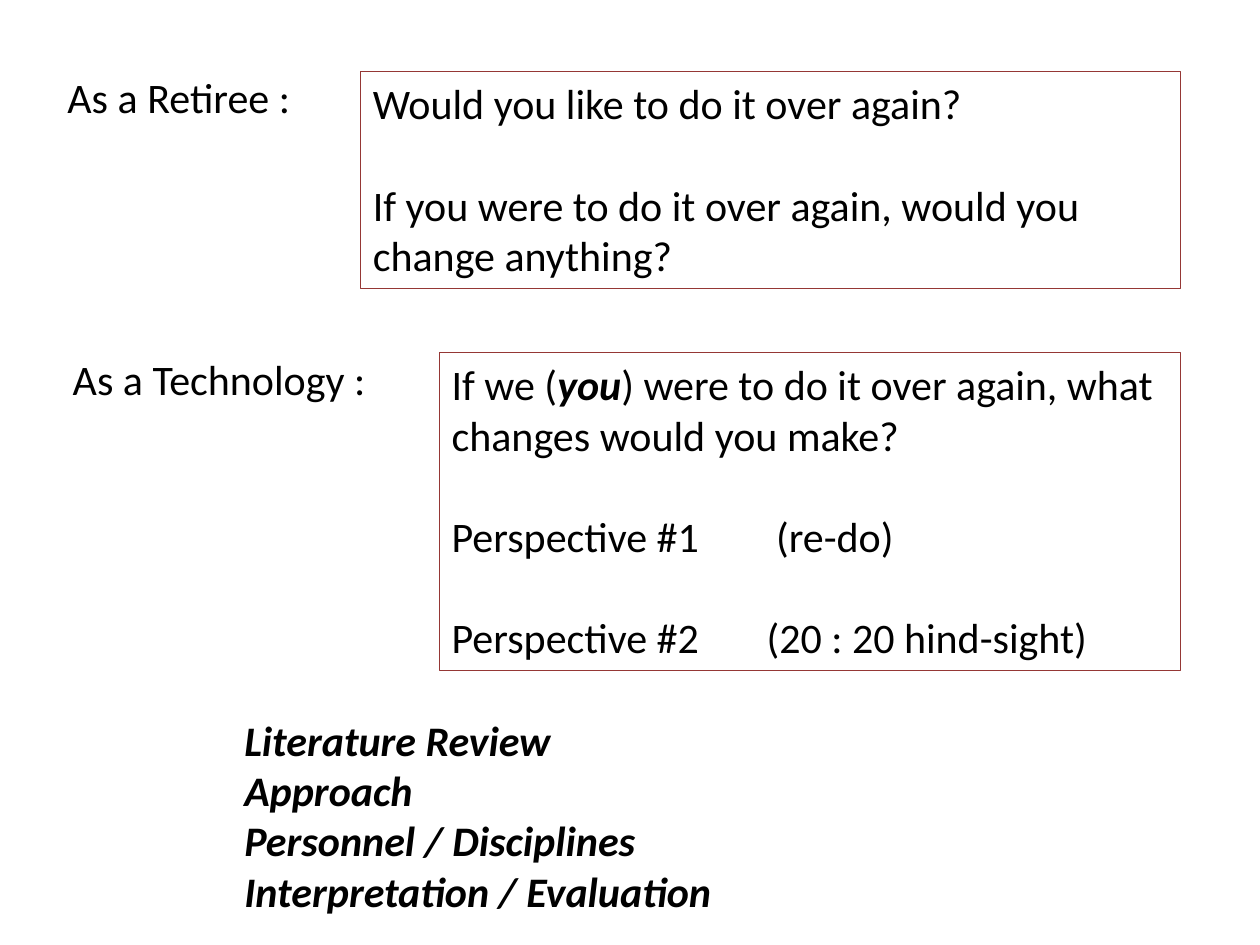
"""Build a slide of review questions for a retiree and for a technology."""
from lxml import etree
from pptx import Presentation
from pptx.dml.color import RGBColor
from pptx.oxml.ns import qn
from pptx.util import Pt

LINE_HEIGHT = 29


def color(value):
    return RGBColor.from_string(value)


def add_text(slide, left, top, width, height, lines, gap=0, border=None, wrap=False, emphasis=None):
    box = slide.shapes.add_textbox(Pt(left), Pt(top), Pt(width), Pt(height))
    if border:
        box.line.color.rgb = color(border)
        box.line.width = Pt(0.75)
    frame = box.text_frame
    frame.word_wrap = wrap
    for index, line in enumerate(lines):
        paragraph = frame.paragraphs[0] if index == 0 else frame.add_paragraph()
        for piece in line if isinstance(line, tuple) else (line,):
            paragraph.add_run().text = piece
        paragraph.font.name = "Calibri"
        paragraph.font.size = Pt(24)
        paragraph.font.color.rgb = color("000000")
        paragraph.font.bold = paragraph.font.italic = emphasis
        if index and gap:
            paragraph.space_before = Pt(gap)
    return frame.paragraphs


prs = Presentation()
prs.slide_width, prs.slide_height = Pt(720), Pt(540)
slide = prs.slides.add_slide(prs.slide_layouts[6])

add_text(slide, 31.5, 37.5, 144, 36, ["As a Retiree :"])
add_text(slide, 206, 41, 468.5, 124, [
    "Would you like to do it over again?",
    "If you were to do it over again, would you change anything?",
], LINE_HEIGHT, "953735", True)

add_text(slide, 34.5, 198.5, 186, 36, ["As a Technology :"])
question, *perspectives = add_text(slide, 251, 201.5, 423.5, 181.5, [
    ("If we (", "you", ") were to do it over again, what changes would you make?"),
    "Perspective #1\t (re-do)",
    "Perspective #2\t(20 : 20 hind-sight)",
], LINE_HEIGHT, "953735", True)
you = question.runs[1].font
you.bold = you.italic = True

for perspective in perspectives:
    properties = perspective._p.get_or_add_pPr()
    tabs = etree.Element(qn("a:tabLst"))
    etree.SubElement(tabs, qn("a:tab"), pos=str(Pt(180)), algn="l")
    properties.find(qn("a:defRPr")).addprevious(tabs)

add_text(slide, 132.5, 404.5, 291.5, 152.5, [
    "Literature Review",
    "Approach",
    "Personnel / Disciplines",
    "Interpretation / Evaluation",
], emphasis=True)

prs.save("out.pptx")
